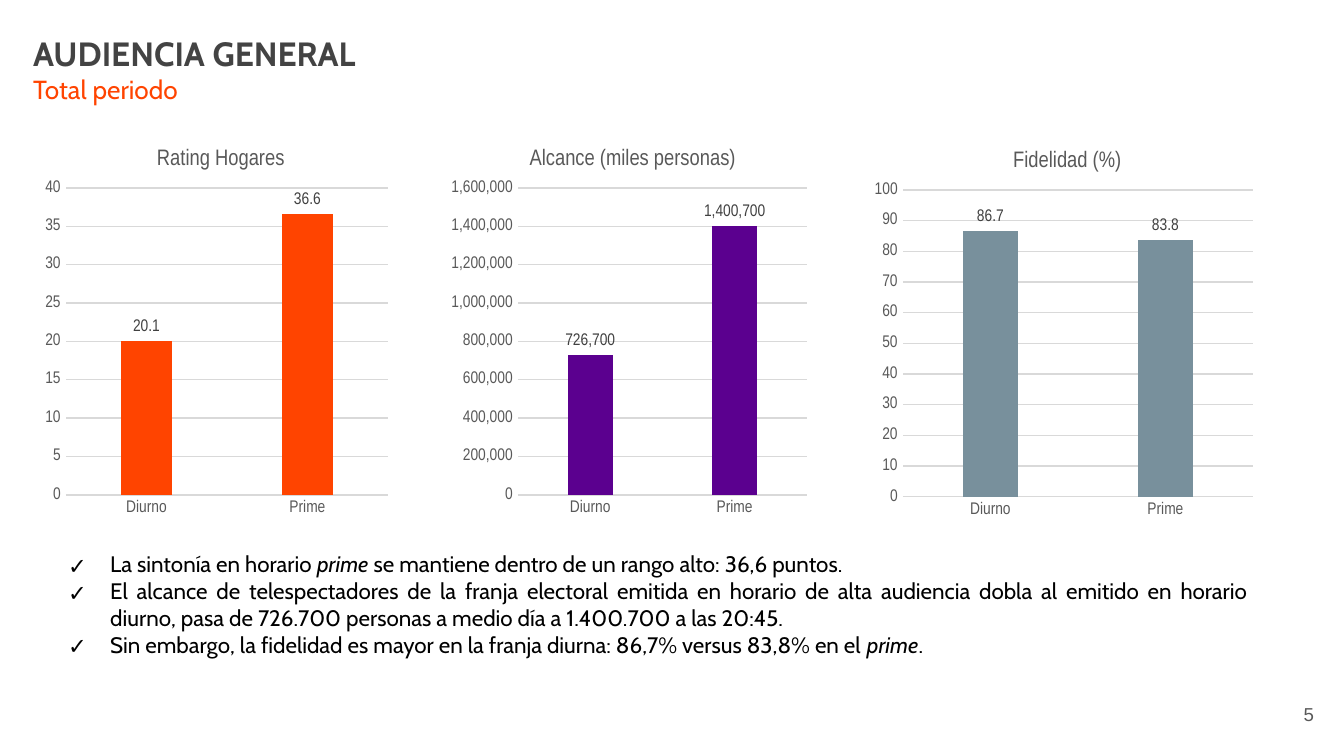
from lxml.etree import SubElement
from pptx import Presentation
from pptx.chart.data import CategoryChartData
from pptx.dml.color import RGBColor
from pptx.enum.chart import XL_CHART_TYPE, XL_LABEL_POSITION, XL_TICK_MARK
from pptx.enum.text import MSO_ANCHOR, PP_ALIGN
from pptx.oxml.ns import qn
from pptx.util import Pt

PX = 9144000 / 1344
BLACK = RGBColor(0x00, 0x00, 0x00)
DARK = RGBColor(0x43, 0x43, 0x43)
LABEL = RGBColor(0x40, 0x40, 0x40)
GRAY = RGBColor(0x59, 0x59, 0x59)
GRID = RGBColor(0xD9, 0xD9, 0xD9)
ORANGE = RGBColor(0xFF, 0x44, 0x00)
PURPLE = RGBColor(0x5B, 0x00, 0x8F)
SLATE = RGBColor(0x78, 0x90, 0x9C)


def style(font, name, size, color, bold=False, italic=False):
    font.name, font.size, font.bold, font.italic = name, Pt(size), bold, italic
    font.color.rgb = color


def place(parent, index, **values):
    """Give a chart part a manual layout, in fractions of the chart."""
    for old in parent.findall(qn("c:layout")):
        parent.remove(old)
    layout = SubElement(parent, qn("c:layout"))
    parent.insert(index, layout)
    manual = SubElement(layout, qn("c:manualLayout"))
    for tag, value in values.items():
        SubElement(manual, qn(f"c:{tag}")).set("val", str(value))


prs = Presentation()
prs.slide_width, prs.slide_height = round(1344 * PX), round(756 * PX)
slide = prs.slides.add_slide(prs.slide_layouts[6])

# Heading, findings and page number
frames = []
for box, inset in (((20, 20, 669, 83), 13), ((55, 544, 1207, 126), None),
                   ((1246, 685, 81, 58), 13)):
    frame = slide.shapes.add_textbox(*(round(v * PX) for v in box)).text_frame
    frame.word_wrap = True
    if inset:
        frame.margin_left = frame.margin_right = round(inset * PX)
        frame.margin_top = frame.margin_bottom = round(inset * PX)
    frames.append(frame)
heading, findings, page = frames

heading.text = "AUDIENCIA GENERAL\nTotal periodo"
title, subtitle = heading.paragraphs
style(title.runs[0].font, "Cabin", 18, DARK, bold=True)
style(subtitle.runs[0].font, "Cabin", 14, ORANGE)

page.text = "5"
page.vertical_anchor = MSO_ANCHOR.MIDDLE
page.paragraphs[0].alignment = PP_ALIGN.RIGHT
style(page.paragraphs[0].runs[0].font, "Arial", 10, GRAY)

# Each finding is a list of runs; "prime" is set in italics
FINDINGS = [
    ["La sintonía en horario ", "prime",
     " se mantiene dentro de un rango alto: 36,6 puntos."],
    ["El alcance de telespectadores de la franja electoral emitida en horario "
     "de alta audiencia dobla al emitido en horario diurno, pasa de 726.700 "
     "personas a medio día a 1.400.700 a las 20:45."],
    ["Sin embargo, la fidelidad es mayor en la franja diurna: 86,7% versus "
     "83,8% en el ", "prime", "."],
]
for i, parts in enumerate(FINDINGS):
    finding = findings.paragraphs[0] if i == 0 else findings.add_paragraph()
    finding.alignment = PP_ALIGN.JUSTIFY
    props = finding._p.get_or_add_pPr()
    props.set("marL", str(round(42 * PX)))
    props.set("indent", str(round(-42 * PX)))
    bullet_color = SubElement(props, qn("a:buClr"))
    SubElement(bullet_color, qn("a:srgbClr")).set("val", str(BLACK))
    SubElement(props, qn("a:buFont")).set("typeface", "Noto Sans Symbols")
    SubElement(props, qn("a:buChar")).set("char", "✓")
    for part in parts:
        run = finding.add_run()
        run.text = part
        style(run.font, "Cabin", 12, BLACK, italic=part == "prime")

# Charts: name, values, number format, color, left, top, width,
# then title left, plot left and plot width
CHARTS = [
    ("Rating Hogares", (20.1, 36.6), "General", ORANGE, 39, 122, 356, 153, 66, 322),
    ("Alcance (miles personas)", (726700, 1400700), "#,##0", PURPLE,
     444, 122, 371, 526, 518, 289),
    ("Fidelidad (%)", (86.7, 83.8), "General", SLATE, 867, 124, 395, 1009, 903, 350),
]
HEIGHT = 403
for name, values, fmt, color, left, top, width, title_x, plot_x, plot_w in CHARTS:
    data = CategoryChartData(number_format=fmt)
    data.categories = ["Diurno", "Prime"]
    data.add_series(name, values)
    chart = slide.shapes.add_chart(
        XL_CHART_TYPE.COLUMN_CLUSTERED,
        *(round(v * PX) for v in (left, top, width, HEIGHT)), data).chart
    style(chart.font, "Arial Narrow", 10, BLACK)
    chart.has_legend = False

    chart.has_title = True
    chart.chart_title.text_frame.text = name
    style(chart.chart_title.text_frame.paragraphs[0].runs[0].font,
          "Arial Narrow", 12, GRAY)
    place(chart.chart_title._element, 1, xMode="edge", yMode="edge",
          x=round((title_x - left) / width, 2), y=0.05)
    place(chart._chartSpace.chart.plotArea, 0, layoutTarget="inner",
          xMode="edge", yMode="edge", x=(plot_x - left) / width, y=66 / HEIGHT,
          w=plot_w / width, h=307 / HEIGHT)

    for axis in (chart.category_axis, chart.value_axis):
        axis.major_tick_mark = axis.minor_tick_mark = XL_TICK_MARK.NONE
        style(axis.tick_labels.font, "Arial Narrow", 9, GRAY)
    value_axis = chart.value_axis
    value_axis.minimum_scale = 0
    value_axis.tick_labels.number_format = fmt
    value_axis.tick_labels.number_format_is_linked = False
    value_axis.format.line.fill.background()
    for line in (chart.category_axis.format.line,
                 value_axis.major_gridlines.format.line):
        line.color.rgb = GRID
        line.width = Pt(0.75)

    plot = chart.plots[0]
    plot.gap_width, plot.overlap = 219, -27
    plot.vary_by_categories = False
    plot.series[0].format.fill.solid()
    plot.series[0].format.fill.fore_color.rgb = color
    plot.has_data_labels = True
    labels = plot.data_labels
    labels.show_value = True
    labels.position = XL_LABEL_POSITION.OUTSIDE_END
    labels.number_format = fmt
    labels.number_format_is_linked = False
    style(labels.font, "Arial Narrow", 9, LABEL)

prs.save("out.pptx")
